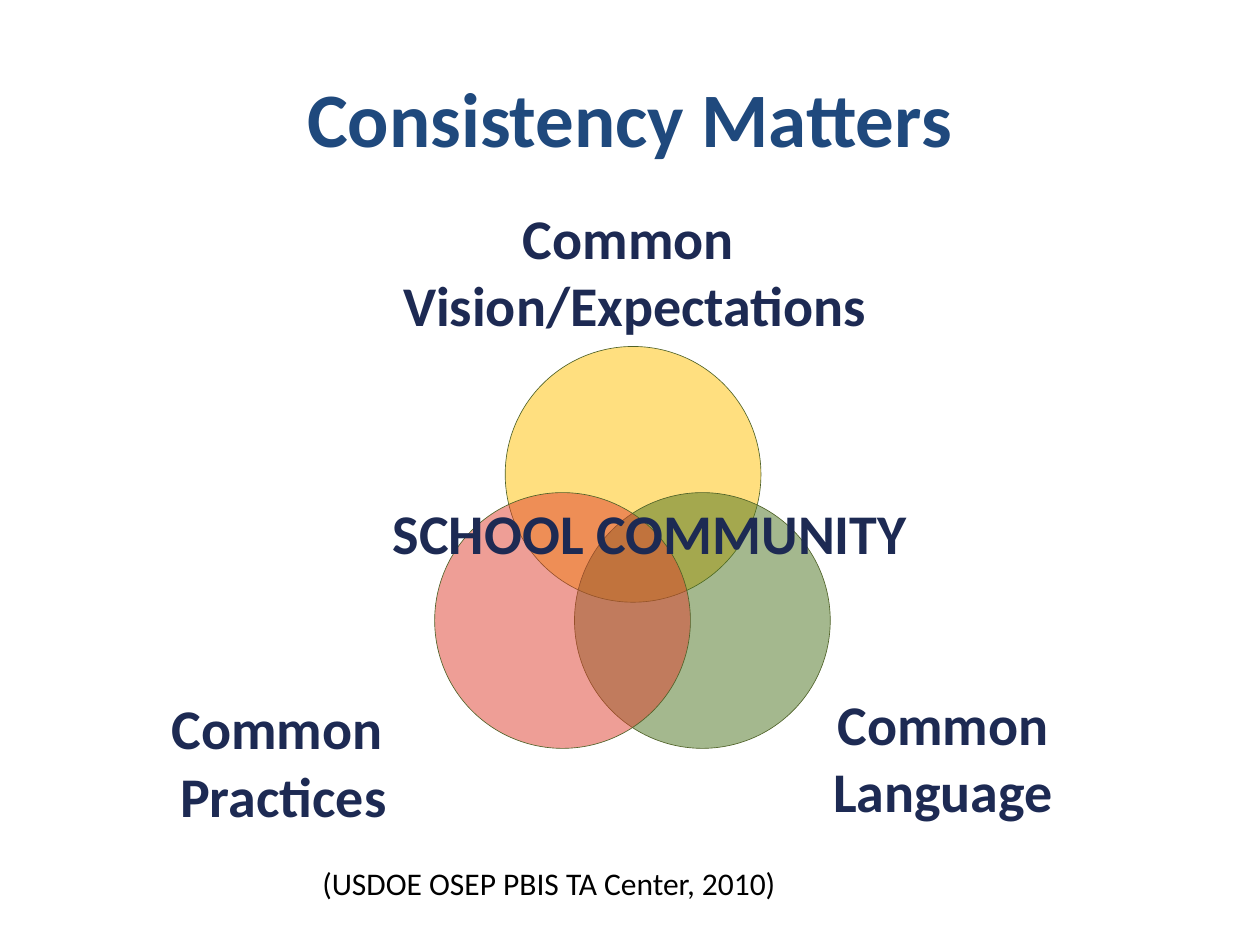
from lxml import etree
from pptx import Presentation
from pptx.dml.color import RGBColor
from pptx.enum.shapes import MSO_SHAPE
from pptx.enum.text import MSO_ANCHOR, PP_ALIGN
from pptx.oxml.ns import qn
from pptx.util import Emu, Pt

EMU_PER_PX = 9144  # 100 px to the inch
OVAL = MSO_SHAPE.OVAL
MIDDLE = MSO_ANCHOR.MIDDLE
CENTER, LEFT = PP_ALIGN.CENTER, PP_ALIGN.LEFT

TITLE_BLUE = RGBColor(0x1F, 0x49, 0x7D)
NAVY = RGBColor(0x1D, 0x2A, 0x53)
BLACK = RGBColor(0, 0, 0)
OUTLINE = RGBColor(0x4F, 0x62, 0x28)
YELLOW = RGBColor(0xFF, 0xC0, 0x00)
GREEN = RGBColor(0x4B, 0x73, 0x1F)
RED = RGBColor(0xDE, 0x3F, 0x2E)


def px(*lengths):
    return [Emu(length * EMU_PER_PX) for length in lengths]


def write(frame, lines, size, color, bold=True, align=LEFT):
    """Fill a text frame with one paragraph per line, all in one style."""
    frame.text = "\n".join(lines)
    for paragraph in frame.paragraphs:
        paragraph.alignment = align
        font = paragraph.font
        font.name, font.size, font.bold = "Calibri", Pt(size), bold
        font.color.rgb = color


prs = Presentation()
prs.slide_width, prs.slide_height = px(1000, 750)
slide = prs.slides.add_slide(prs.slide_layouts[5])
shapes = slide.shapes

title = shapes.title
title.left, title.top, title.width, title.height = px(50, 30, 900, 125)
title.text_frame.vertical_anchor = MIDDLE
write(title.text_frame, ["Consistency Matters"], 44, TITLE_BLUE, align=CENTER)

# Venn diagram: circle position and colour, then its label and label box
DIAMETER = 203
venn = [
    (401, 275, YELLOW, ["Common ", "Vision/Expectations"], (311, 161, 386, 108)),
    (456, 391, GREEN, ["Common ", "Language "], (565, 517, 377, 167)),
    (345, 391, RED, ["Common ", "Practices"], (125, 550, 200, 108)),
]
for left, top, color, label_lines, label_box in venn:
    circle = shapes.add_shape(OVAL, *px(left, top, DIAMETER, DIAMETER))
    circle.shadow.inherit = False
    circle.fill.solid()
    circle.fill.fore_color.rgb = color
    color_xml = circle.fill._xPr.find(qn("a:solidFill"))[0]
    etree.SubElement(color_xml, qn("a:alpha"), val="50000")
    circle.line.color.rgb = OUTLINE
    circle.line.width = Pt(0.37)

    label = shapes.add_textbox(*px(*label_box)).text_frame
    label.margin_left = label.margin_right = 0
    label.margin_top = label.margin_bottom = 0
    label.vertical_anchor = MIDDLE
    label.word_wrap = False
    write(label, label_lines, 32, NAVY, align=CENTER)

community = shapes.add_textbox(*px(302, 391, 435, 64)).text_frame
community.word_wrap = True
write(community, ["SCHOOL COMMUNITY"], 32, NAVY)

citation = shapes.add_textbox(*px(246, 681, 514, 40)).text_frame
citation.word_wrap = True
write(citation, ["(USDOE OSEP PBIS TA Center, 2010)"], 18, BLACK, bold=False)

prs.save("out.pptx")
